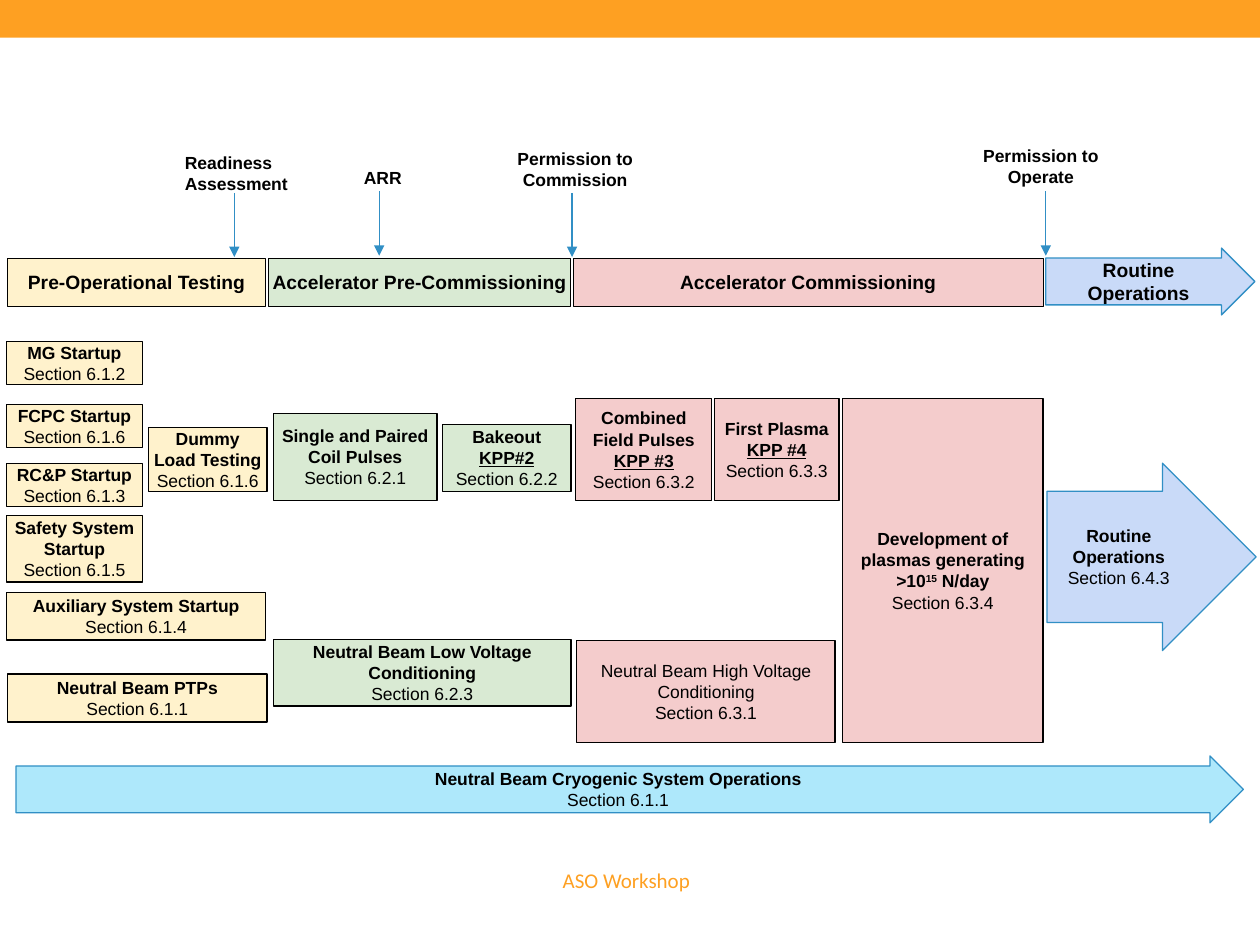
import pptx
import pptx.dml.color
import pptx.enum.shapes
import pptx.enum.text
import pptx.oxml
import pptx.oxml.ns
import pptx.util
from dataclasses import dataclass

Pt = pptx.util.Pt
SHAPES = pptx.enum.shapes.MSO_SHAPE
ALIGN = pptx.enum.text.PP_ALIGN


@dataclass(frozen=True)
class Theme:
    orange: str = "FEA022"
    testing: str = "FFF2CC"
    pre_commissioning: str = "D9EAD3"
    commissioning: str = "F4CCCC"
    operations: str = "C9DAF8"
    cryogenic: str = "AEE8FB"
    blue: str = "318FC5"
    black: str = "000000"
    font: str = "Arial"
    footer_font: str = "Calibri"
    body_size: float = 10
    phase_size: float = 11
    footer_size: float = 12


THEME = Theme()
BOLD = {"bold": True}
PLAIN = {"bold": False}
TARGET = {"bold": True, "underline": True}


def color(value):
    return pptx.dml.color.RGBColor.from_string(value)


def activity(title, section, target=None, style=BOLD):
    """Paragraphs of an activity: title, optional KPP, section number."""
    middle = [[(target, TARGET)]] if target else []
    return [[(title, style)], *middle, [(f"Section {section}", PLAIN)]]


def write_text(shape, paragraphs, size=THEME.body_size, align=ALIGN.CENTER,
               side=3, font=THEME.font, ink=THEME.black):
    frame = shape.text_frame
    settings = {"word_wrap": True,
                "vertical_anchor": pptx.enum.text.MSO_ANCHOR.MIDDLE,
                "margin_left": Pt(side), "margin_right": Pt(side),
                "margin_top": Pt(7.2), "margin_bottom": Pt(7.2)}
    for name, value in settings.items():
        setattr(frame, name, value)
    for index, runs in enumerate(paragraphs):
        paragraph = frame.add_paragraph() if index else frame.paragraphs[0]
        paragraph.alignment = align
        for text, style in runs:
            run = paragraph.add_run()
            run.text = text
            formats = {"name": font, "size": Pt(size), **style}
            baseline = formats.pop("baseline", None)
            for name, value in formats.items():
                setattr(run.font, name, value)
            run.font.color.rgb = color(ink)
            if baseline:
                run.font._element.set("baseline", str(baseline))


def add_block(slide, bounds, fill, paragraphs=(), kind=SHAPES.RECTANGLE,
              line=THEME.black, **text_options):
    shape = slide.shapes.add_shape(kind, *map(Pt, bounds))
    shape.shadow.inherit = False
    shape.fill.solid()
    shape.fill.fore_color.rgb = color(fill)
    if line:
        shape.line.color.rgb = color(line)
        shape.line.width = Pt(0.75)
    else:
        shape.line.fill.background()
    if paragraphs:
        write_text(shape, paragraphs, **text_options)
    return shape


def add_block_arrow(slide, bounds, fill, paragraphs, **text_options):
    arrow = add_block(slide, bounds, fill, paragraphs, SHAPES.RIGHT_ARROW,
                      THEME.blue, **text_options)
    arrow.adjustments[0] = 0.7
    arrow.adjustments[1] = 0.5


def add_label(slide, bounds, text, style=BOLD, **text_options):
    box = slide.shapes.add_textbox(*map(Pt, bounds))
    write_text(box, [[(text, style)]], side=7.2, **text_options)


def add_milestone_arrow(slide, x, top):
    connector = slide.shapes.add_connector(
        pptx.enum.shapes.MSO_CONNECTOR.STRAIGHT,
        Pt(x), Pt(top), Pt(x), Pt(top + 36.7))
    connector.line.color.rgb = color(THEME.blue)
    connector.line.width = Pt(0.75)
    namespace = pptx.oxml.ns.nsdecls("a")
    connector.line._get_or_add_ln().append(
        pptx.oxml.parse_xml(f'<a:tailEnd {namespace} type="triangle"/>'))
    connector._element.spPr.append(
        pptx.oxml.parse_xml(f"<a:effectLst {namespace}/>"))


def main():
    presentation = pptx.Presentation()
    presentation.slide_width, presentation.slide_height = Pt(720), Pt(540)
    slide = presentation.slides.add_slide(presentation.slide_layouts[6])

    # Top band and footer
    add_block(slide, (0, 0, 720, 21.6), THEME.orange, line=None)
    add_label(slide, (189.4, 489.6, 337, 26.6), "ASO Workshop", PLAIN,
              size=THEME.footer_size, font=THEME.footer_font,
              ink=THEME.orange)

    # Phase timeline
    for left, width, fill, text in (
            (327.6, 268.6, THEME.commissioning, "Accelerator Commissioning"),
            (153.4, 172.8, THEME.pre_commissioning,
             "Accelerator Pre-Commissioning"),
            (4.3, 147.6, THEME.testing, "Pre-Operational Testing")):
        add_block(slide, (left, 147.6, width, 27.4), fill, [[(text, BOLD)]],
                  size=THEME.phase_size, side=2)
    add_block_arrow(slide, (597.6, 141.8, 119.5, 38.2), THEME.operations,
                    [[("Routine Operations", BOLD)]], size=THEME.phase_size)

    # Milestones above the timeline
    for left, top, width, text, align, x, arrow_top in (
            (98.6, 85, 77.8, "Readiness Assessment", ALIGN.LEFT, 133.9, 110.2),
            (200.9, 87.8, 45.4, "ARR", ALIGN.LEFT, 216.7, 109.4),
            (285.8, 82.8, 85.7, "Permission to Commission", ALIGN.CENTER,
             326.9, 110.2),
            (553, 81.4, 83.5, "Permission to Operate", ALIGN.CENTER,
             597.6, 109.4)):
        add_label(slide, (left, top, width, 27.4), text, align=align)
        add_milestone_arrow(slide, x, arrow_top)

    # Activities of each phase: bounds, then title, section and KPP
    activities = {
        THEME.testing: (
            ((3.6, 195.1, 77.8, 24.5), "MG Startup", "6.1.2"),
            ((3.6, 231.1, 77.8, 24.5), "FCPC Startup", "6.1.6"),
            ((3.6, 265, 77.8, 24.5), "RC&P Startup", "6.1.3"),
            ((3.6, 294.5, 77.8, 38.2), "Safety System Startup", "6.1.5"),
            ((3.6, 338.4, 148.3, 27.4), "Auxiliary System Startup", "6.1.4"),
            ((4.3, 385.2, 148.3, 27.4), "Neutral Beam PTPs", "6.1.1"),
            ((84.7, 244.1, 67.9, 36.7), "Dummy Load Testing", "6.1.6")),
        THEME.pre_commissioning: (
            ((156.2, 236.2, 93.6, 49.7), "Single and Paired Coil Pulses",
             "6.2.1"),
            ((252.7, 242.6, 73.7, 38.2), "Bakeout", "6.2.2", "KPP#2"),
            ((156.2, 365.3, 170.2, 38.2),
             "Neutral Beam Low Voltage Conditioning", "6.2.3")),
        THEME.commissioning: (
            ((329, 227.7, 77.8, 58.3), "Combined Field Pulses", "6.3.2",
             "KPP #3"),
            ((408.2, 227.7, 71.3, 58.3), "First Plasma", "6.3.3", "KPP #4"),
            ((329.6, 366, 147.6, 58.3),
             "Neutral Beam High Voltage Conditioning", "6.3.1", None, PLAIN)),
    }
    for fill, blocks in activities.items():
        for bounds, *content in blocks:
            add_block(slide, bounds, fill, activity(*content))

    # Plasma development, with its superscript exponent
    add_block(slide, (481.5, 227.7, 114.5, 196.6), THEME.commissioning, [
        [("Development of plasmas generating >10", BOLD),
         ("15", {"bold": True, "baseline": 30000}), (" N/day", BOLD)],
        [("Section 6.3.4", PLAIN)]])

    # Continuing operations
    add_block_arrow(slide, (598.3, 264.7, 119.5, 107.1), THEME.operations,
                    activity("Routine Operations", "6.4.3"))
    add_block_arrow(slide, (9.2, 432, 701.3, 38.2), THEME.cryogenic,
                    activity("Neutral Beam Cryogenic System Operations",
                             "6.1.1"))

    presentation.save("out.pptx")


if __name__ == "__main__":
    main()
